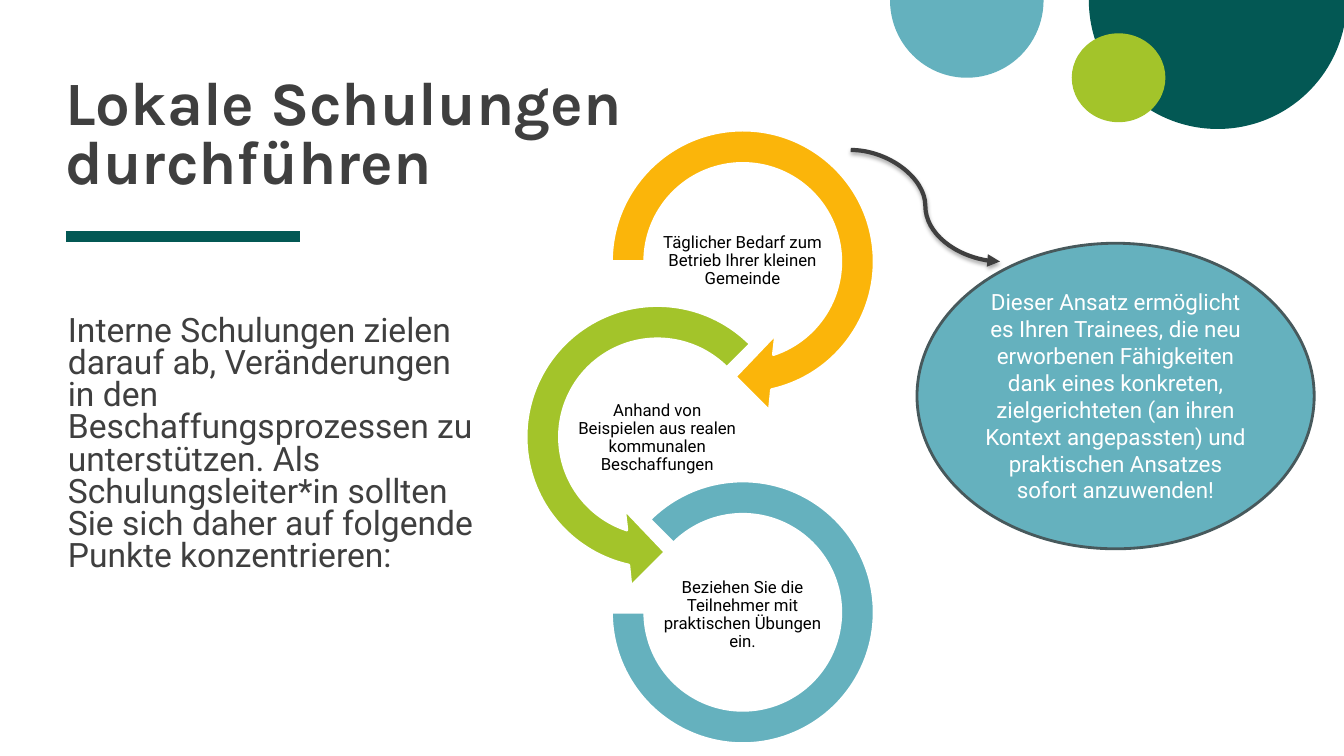
from math import cos, radians, sin, tan

from lxml.etree import SubElement
from pptx import Presentation
from pptx.dml.color import RGBColor
from pptx.enum.shapes import MSO_CONNECTOR, MSO_SHAPE
from pptx.enum.text import MSO_ANCHOR, MSO_AUTO_SIZE, PP_ALIGN
from pptx.oxml.ns import qn
from pptx.util import Cm, Pt

COLOURS = {
    "dark green": "035854", "teal": "64B1BE", "ring teal": "65B1BE",
    "lime": "A3C42A", "amber": "FBB50A", "grey": "3F3F3F",
    "outline": "47595C", "white": "FFFFFF", "black": "000000",
}


def paint(shape, fill, line=None):
    shape.shadow.inherit = False
    shape.fill.solid()
    shape.fill.fore_color.rgb = RGBColor.from_string(COLOURS[fill])
    if line:
        shape.line.color.rgb = RGBColor.from_string(COLOURS[line])
        shape.line.width = Pt(2)
    else:
        shape.line.fill.background()


def write(box, text, font, size, colour, align, anchor, spacing, insets):
    frame = box.text_frame
    frame.text = text
    frame.word_wrap = True
    frame.auto_size = MSO_AUTO_SIZE.NONE
    frame.vertical_anchor = anchor
    frame.margin_left, frame.margin_top, frame.margin_right, frame.margin_bottom = map(Cm, insets)
    para = frame.paragraphs[0]
    para.alignment = align
    para.line_spacing = spacing
    para.space_before = Pt(0)
    span = para.runs[0]
    span.font.name = font
    span.font.size = Pt(size)
    span.font.color.rgb = RGBColor.from_string(COLOURS[colour])
    return para


deck = Presentation()
deck.slide_width, deck.slide_height = Cm(33.87), Cm(19.05)
page = deck.slides.add_slide(deck.slide_layouts[1])

# Corner circles; the two pies are lower halves hanging from the top edge
for kind, left, top, width, height, colour in [
    (MSO_SHAPE.PIE, 27.44, -3.25, 6.5, 6.5, "dark green"),
    (MSO_SHAPE.PIE, 22.43, -1.95, 3.87, 3.91, "teal"),
    (MSO_SHAPE.OVAL, 27.01, 0.84, 2.36, 2.24, "lime"),
]:
    circle = page.shapes.add_shape(kind, Cm(left), Cm(top), Cm(width), Cm(height))
    paint(circle, colour)
    if kind == MSO_SHAPE.PIE:
        circle.adjustments[0], circle.adjustments[1] = 0, 108

# Title and the rule below it
title = page.shapes.title
title.left, title.top, title.width, title.height = Cm(1.65), Cm(0.53), Cm(14.76), Cm(4.42)
para = write(title, "Lokale Schulungen durchführen", "Karla", 44, "grey",
             PP_ALIGN.LEFT, MSO_ANCHOR.BOTTOM, 0.8, (0, 0, 0, 0))
para.runs[0].font.bold = True

rule = page.shapes.add_connector(MSO_CONNECTOR.STRAIGHT, Cm(1.66), Cm(5.96), Cm(7.57), Cm(5.96))
rule.line.color.rgb = RGBColor.from_string(COLOURS["dark green"])
rule.line.width = Pt(8)
SubElement(rule._element.spPr, qn("a:effectLst"))

# Introduction
body = page.placeholders[1]
body.left, body.top, body.width, body.height = Cm(1.07), Cm(7.33), Cm(11.1), Cm(11.18)
para = write(body, "Interne Schulungen zielen darauf ab, Veränderungen in den "
             "Beschaffungsprozessen zu unterstützen. Als Schulungsleiter*in sollten "
             "Sie sich daher auf folgende Punkte konzentrieren:", "Roboto", 24, "grey",
             PP_ALIGN.LEFT, MSO_ANCHOR.TOP, 0.8, (0, 0.64, 0, 0))
properties = para._p.get_or_add_pPr()
properties.set("marL", str(Cm(0.64)))
properties.set("indent", "0")
SubElement(properties, qn("a:buNone"))

# Three linked rings: two arrows (side -1 mirrors the first), then an open ring
OUTER, INNER, HALF = 3.31, 2.47, 3.85
ARROW_HEAD = [(0.67, 3.76), (-0.19, 2.9), (0.83, 1.83)]
process = page.shapes.add_group_shape()
for step, (centre_x, side, start, colour, text) in enumerate([
    (18.72, 1, 180, "amber", "Täglicher Bedarf zum Betrieb Ihrer kleinen Gemeinde"),
    (16.57, -1, 225, "lime", "Anhand von Beispielen aus realen kommunalen Beschaffungen"),
    (18.72, 1, None, "ring teal", "Beziehen Sie die Teilnehmer mit praktischen Übungen ein."),
]):
    centre_y = 6.59 + 4.42 * step
    if start is None:
        ring = process.shapes.add_shape(MSO_SHAPE.BLOCK_ARC, Cm(centre_x - OUTER),
                                        Cm(centre_y - OUTER), Cm(2 * OUTER), Cm(2 * OUTER))
        for index, value in enumerate((135, 108, 0.127)):
            ring.adjustments[index] = value
    else:
        # Each arc is three Bézier curves
        arcs = []
        for radius, begin, end in ((OUTER, start, 437.4), (INNER, 431.8, start)):
            turn = radians(end - begin) / 3
            pull = 4 / 3 * tan(turn / 4)
            curves = []
            for part in range(3):
                a = radians(begin) + part * turn
                b = a + turn
                curves.append([(radius * x, radius * y) for x, y in (
                    (cos(a) - pull * sin(a), sin(a) + pull * cos(a)),
                    (cos(b) + pull * sin(b), sin(b) - pull * cos(b)),
                    (cos(b), sin(b)))])
            arcs.append(curves)
        first = (OUTER * cos(radians(start)), OUTER * sin(radians(start)))
        inner_end = (INNER * cos(radians(431.8)), INNER * sin(radians(431.8)))
        commands = [("moveTo", [first])]
        commands += [("cubicBezTo", curve) for curve in arcs[0]]
        commands += [("lnTo", [point]) for point in ARROW_HEAD + [inner_end]]
        commands += [("cubicBezTo", curve) for curve in arcs[1]] + [("close", [])]

        # The freeform's square frame is refilled with the curved outline
        left, top, size = Cm(centre_x - HALF), Cm(centre_y - HALF), Cm(2 * HALF)
        builder = process.shapes.build_freeform(left, top)
        builder.add_line_segments([(left + size, top), (left + size, top + size)])
        ring = builder.convert_to_shape()
        track = next(ring._element.iter(qn("a:path")))
        for child in list(track):
            track.remove(child)
        for command, points in commands:
            node = SubElement(track, qn("a:" + command))
            for x, y in points:
                SubElement(node, qn("a:pt"), x=str(Cm(HALF + side * x)), y=str(Cm(HALF + y)))
    paint(ring, colour, "white")
    label = process.shapes.add_textbox(Cm(centre_x - 2.14), Cm(5.52 + 4.46 * step),
                                       Cm(4.27), Cm(2.13))
    write(label, text, "Roboto", 12, "black", PP_ALIGN.CENTER, MSO_ANCHOR.MIDDLE,
          0.9, (0.03,) * 4)

# Curved arrow with a soft shadow
arrow = page.shapes.add_connector(MSO_CONNECTOR.CURVE, Cm(21.44), Cm(3.78), Cm(25.2), Cm(6.59))
arrow.line.color.rgb = RGBColor.from_string(COLOURS["grey"])
arrow.line.width = Pt(3)
SubElement(arrow.line._get_or_add_ln(), qn("a:tailEnd"), type="triangle")
effects = SubElement(arrow._element.spPr, qn("a:effectLst"))
shadow = SubElement(effects, qn("a:outerShdw"), blurRad=str(Pt(3.1)), dist=str(Pt(1.8)),
                    dir="5400000", rotWithShape="0")
shade = SubElement(shadow, qn("a:srgbClr"), val=COLOURS["black"])
SubElement(shade, qn("a:alpha"), val="35000")

# Benefit bubble
bubble = page.shapes.add_shape(MSO_SHAPE.OVAL, Cm(23.11), Cm(6.13), Cm(10.01), Cm(7.7))
paint(bubble, "ring teal", "outline")
write(bubble, "Dieser Ansatz ermöglicht es Ihren Trainees, die neu erworbenen Fähigkeiten "
      "dank eines konkreten, zielgerichteten (an ihren Kontext angepassten) und praktischen "
      "Ansatzes sofort anzuwenden!", "Roboto", 16, "white", PP_ALIGN.CENTER,
      MSO_ANCHOR.MIDDLE, 1.0, (0.25, 0.13, 0.25, 0.13))

deck.save("out.pptx")
